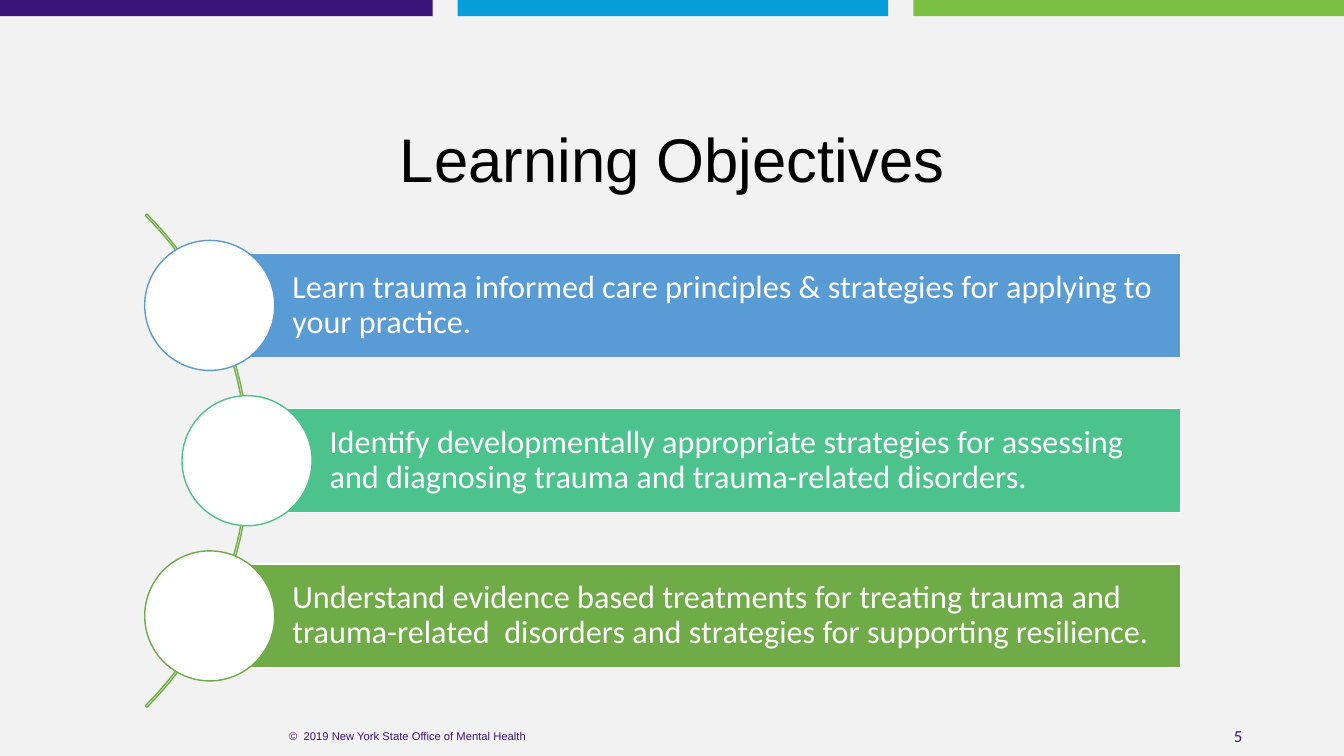
from pptx import Presentation
from pptx.dml.color import RGBColor
from pptx.enum.shapes import MSO_SHAPE
from pptx.enum.text import MSO_ANCHOR, PP_ALIGN
from pptx.util import Inches, Pt

RECTANGLE, OVAL, ARC = MSO_SHAPE.RECTANGLE, MSO_SHAPE.OVAL, MSO_SHAPE.BLOCK_ARC
MIDDLE = MSO_ANCHOR.MIDDLE
LEFT, CENTER, RIGHT = PP_ALIGN.LEFT, PP_ALIGN.CENTER, PP_ALIGN.RIGHT

WIDTH, HEIGHT = 13.33, 7.5
BACKGROUND, WHITE, BLACK, PURPLE = "F2F2F2", "FFFFFF", "000000", "391378"
STRIPES = [(0, 4.29, PURPLE), (4.54, 4.27, "049FDA"), (9.06, 4.27, "7BBF43")]
STRIPE_HEIGHT = 0.16

LABELS = [
    ("Learning Objectives", (0.92, 1.22, 11.5, 0.78), 44, "Arial", BLACK, CENTER, 0.9),
    ("©  2019 New York State Office of Mental Health", (1.81, 7.1, 4.47, 0.4), 8, "Arial", PURPLE, CENTER, 1),
    ("5", (9.42, 7.1, 3, 0.4), 12, "Calibri", PURPLE, RIGHT, 1),
]
OBJECTIVES = [
    ("Learn trauma informed care principles & strategies for applying to your practice.", "599BD5", 2.08),
    ("Identify developmentally appropriate strategies for assessing and diagnosing trauma "
     "and trauma-related disorders.", "4CC38C", 2.45),
    ("Understand evidence based treatments for treating trauma and trauma-related  disorders "
     "and strategies for supporting resilience.", "6FAB46", 2.08),
]
FIRST_CENTER, ROW_PITCH = 3.03, 1.54
BAR_RIGHT, BAR_HEIGHT, CIRCLE = 11.71, 1.03, 1.29
ARC_BOX = (-4.45, 1.11, 6.92, 6.92)
ARC_ANGLES = (189, 27, 0.00312)


def color(value):
    return RGBColor.from_string(value)


def add_shape(page, kind, place, fill=None, line=None):
    shape = page.shapes.add_shape(kind, *map(Inches, place))
    shape.shadow.inherit = False
    if fill:
        shape.fill.solid()
        shape.fill.fore_color.rgb = color(fill)
    else:
        shape.fill.background()
    if line:
        shape.line.color.rgb = color(line)
        shape.line.width = Pt(1)
    else:
        shape.line.fill.background()
    return shape


def write(box, text, size, font, ink, align, spacing, insets=(0.1, 0.05, 0.1, 0.05)):
    frame = box.text_frame
    frame.word_wrap = True
    frame.vertical_anchor = MIDDLE
    frame.margin_left, frame.margin_top, frame.margin_right, frame.margin_bottom = map(Inches, insets)
    para = frame.paragraphs[0]
    para.alignment = align
    para.line_spacing = spacing
    span = para.add_run()
    span.text = text
    span.font.size = Pt(size)
    span.font.name = font
    span.font.color.rgb = color(ink)


def add_objective(page, row, text, tint, center_x):
    center_y = FIRST_CENTER + row * ROW_PITCH
    bar_place = (center_x, center_y - BAR_HEIGHT / 2, BAR_RIGHT - center_x, BAR_HEIGHT)
    bar = add_shape(page, RECTANGLE, bar_place, tint, WHITE)
    write(bar, text, 23, "Calibri", WHITE, LEFT, 0.9, (0.82, 0.06, 0.06, 0.06))
    circle_place = (center_x - CIRCLE / 2, center_y - CIRCLE / 2, CIRCLE, CIRCLE)
    add_shape(page, OVAL, circle_place, WHITE, tint)


def main():
    deck = Presentation()
    deck.slide_width, deck.slide_height = Inches(WIDTH), Inches(HEIGHT)
    page = deck.slides.add_slide(deck.slide_layouts[6])
    page.background.fill.solid()
    page.background.fill.fore_color.rgb = color(BACKGROUND)

    for left, width, tint in STRIPES:
        add_shape(page, RECTANGLE, (left, 0, width, STRIPE_HEIGHT), tint)
    for text, place, *style in LABELS:
        write(page.shapes.add_textbox(*map(Inches, place)), text, *style)

    arc = add_shape(page, ARC, ARC_BOX, line="70AD47")
    for index, value in enumerate(ARC_ANGLES):
        arc.adjustments[index] = value
    for row, objective in enumerate(OBJECTIVES):
        add_objective(page, row, *objective)

    deck.save("out.pptx")


if __name__ == "__main__":
    main()
